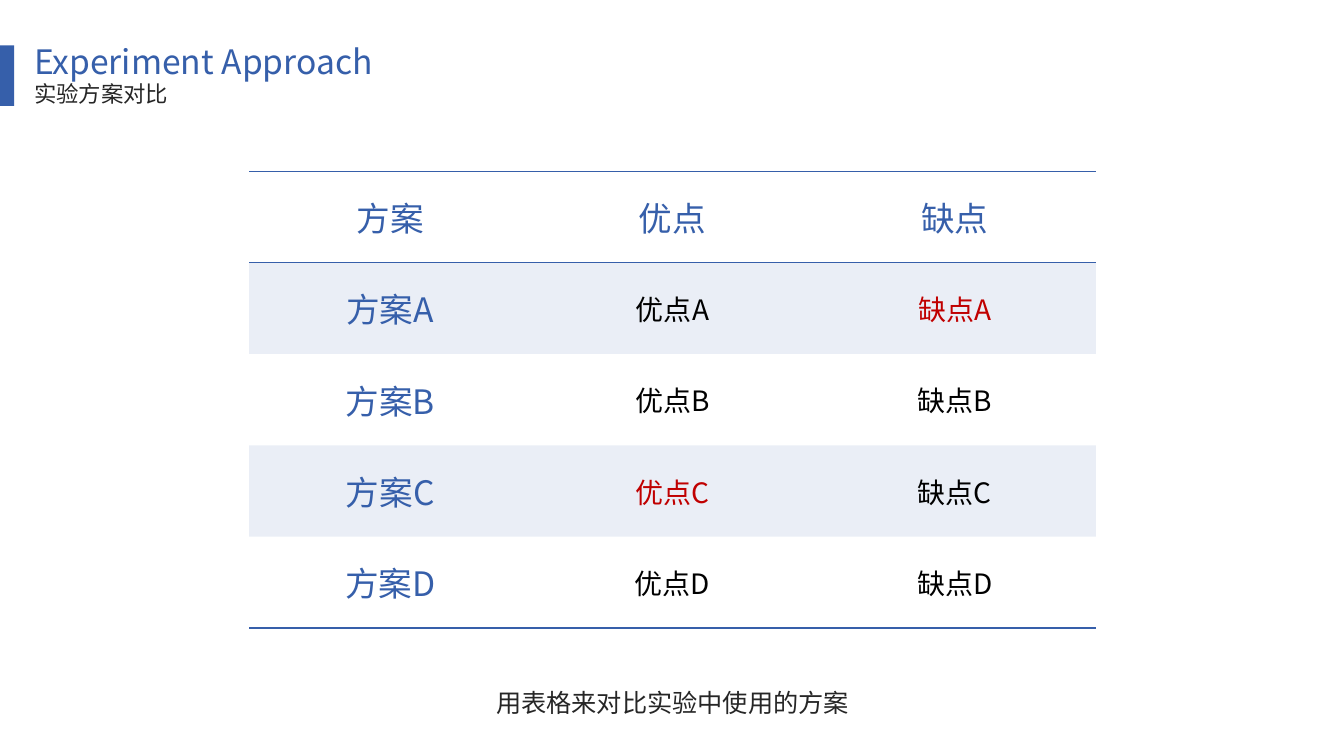
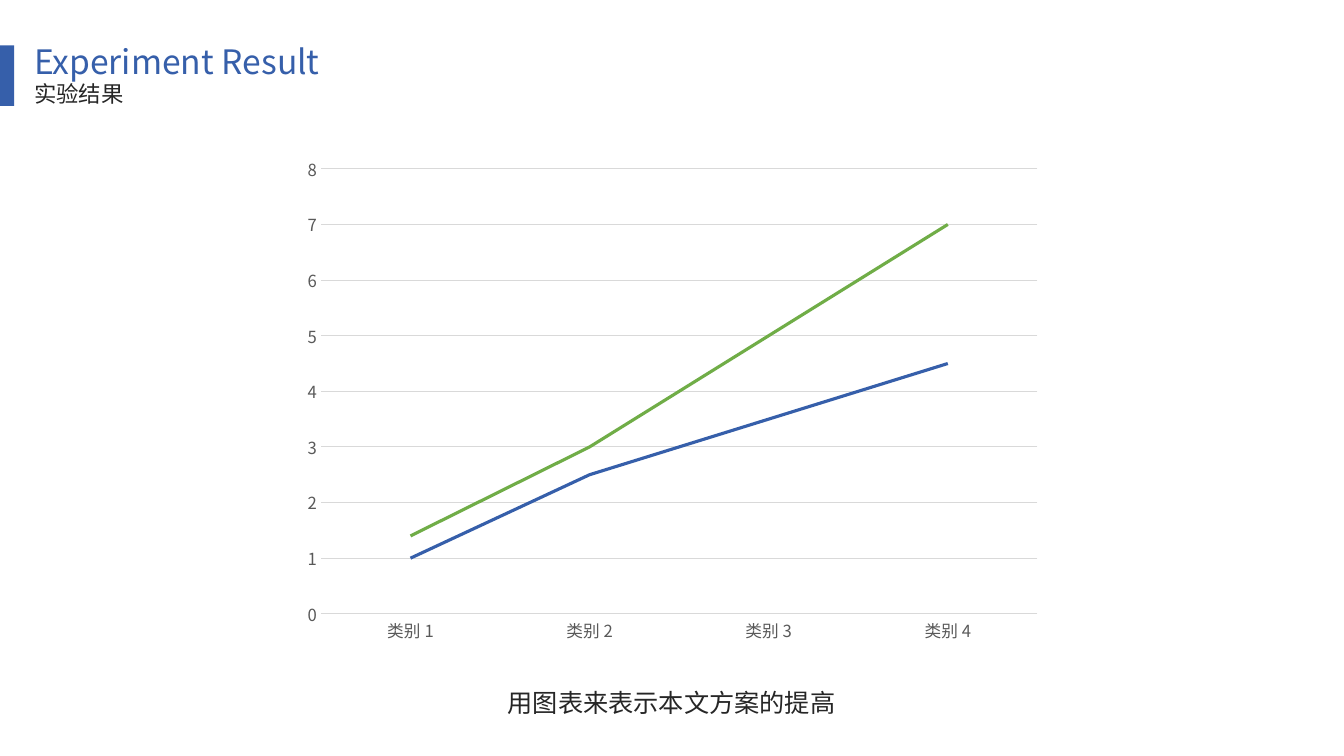
from lxml import etree
from pptx import Presentation
from pptx.chart import data as cd
from pptx.dml.color import RGBColor
from pptx.enum import chart as ch, shapes, text
from pptx.oxml import ns
from pptx.util import Inches, Pt

BLUE = RGBColor(0x36, 0x5F, 0xAA)
GREEN = RGBColor(0x70, 0xAD, 0x47)
RED = RGBColor(0xC0, 0x00, 0x00)
BLACK = RGBColor(0x00, 0x00, 0x00)
DARK = RGBColor(0x26, 0x26, 0x26)
GREY = RGBColor(0x59, 0x59, 0x59)
PALE = RGBColor(0xD9, 0xD9, 0xD9)
FONT = "Noto Sans CJK SC"
PLAIN = "{2D5ABB26-0587-4C30-8999-92F81FD0307C}"
HEADS = ["方案", "优点", "缺点"]
MARKED = {"缺点A", "优点C"}


def add_run(para, words, size, color):
    run = para.add_run()
    run.text = words
    run.font.size = Pt(size)
    run.font.color.rgb = color
    run.font.name = FONT
    east = etree.SubElement(run.font._element, ns.qn("a:ea"))
    east.set("typeface", FONT)


def add_text(slide, box, words, size, color, wrap=True):
    frame = slide.shapes.add_textbox(*map(Inches, box)).text_frame
    frame.word_wrap = wrap
    para = frame.paragraphs[0]
    add_run(para, words, size, color)
    return para


def add_head(slide, title, sub):
    bar = slide.shapes.add_shape(
        shapes.MSO_SHAPE.RECTANGLE, 0, Inches(0.45), Inches(0.14), Inches(0.6))
    bar.shadow.inherit = False
    bar.fill.solid()
    bar.fill.fore_color.rgb = BLUE
    bar.line.fill.background()
    lines = [(0.43, 0.46, title, 24, BLUE, 0.8),
             (0.78, 0.35, sub, 16, DARK, 0.9)]
    for top, high, words, size, color, space in lines:
        para = add_text(slide, (0.24, top, 7.17, high), words, size, color)
        para.line_spacing = space
        para.space_before = Pt(10)


def add_note(slide, words, left, wide):
    para = add_text(slide, (left, 6.77, wide, 0.4), words, 18, DARK, False)
    para.alignment = text.PP_ALIGN.CENTER


def add_edges(cell, sides):
    props = cell._tc.get_or_add_tcPr()
    for spot, side in enumerate(["lnL", "lnR", "lnT", "lnB"]):
        edge = etree.Element(ns.qn("a:" + side))
        if side in sides:
            edge.set("w", str(Pt(1)))
            fill = etree.SubElement(edge, ns.qn("a:solidFill"))
            etree.SubElement(fill, ns.qn("a:srgbClr")).set("val", str(BLUE))
        else:
            etree.SubElement(edge, ns.qn("a:noFill"))
        props.insert(spot, edge)


def tint(cell, shade):
    if not shade:
        cell.fill.background()
        return
    cell.fill.solid()
    cell.fill.fore_color.rgb = BLUE
    color = cell._tc.tcPr.find(".//" + ns.qn("a:srgbClr"))
    etree.SubElement(color, ns.qn("a:alpha")).set("val", "10000")


def add_grid(slide):
    rows = [HEADS] + [[head + key for head in HEADS] for key in "ABCD"]
    last = len(rows) - 1
    table = slide.shapes.add_table(
        len(rows), len(HEADS), Inches(2.47), Inches(1.7),
        Inches(8.4), Inches(4.53)).table
    table.first_row = table.horz_banding = False
    table._tbl.tblPr.find(ns.qn("a:tableStyleId")).text = PLAIN
    for r, row in enumerate(rows):
        sides = {0: ["lnT", "lnB"], 1: ["lnT"], last: ["lnB"]}.get(r, [])
        for c, words in enumerate(row):
            cell = table.cell(r, c)
            cell.vertical_anchor = text.MSO_ANCHOR.MIDDLE
            para = cell.text_frame.paragraphs[0]
            para.alignment = text.PP_ALIGN.CENTER
            if r == 0 or c == 0:
                add_run(para, words, 24, BLUE)
            else:
                add_run(para, words, 20, RED if words in MARKED else BLACK)
            tint(cell, r % 2)
            add_edges(cell, sides)


def set_font(font, size, color):
    font.name = FONT
    font.size = Pt(size)
    font.color.rgb = color


def set_line(line, color, width):
    line.color.rgb = color
    line.width = Pt(width)


def add_plot(slide):
    data = cd.CategoryChartData()
    data.categories = [f"类别 {n}" for n in range(1, 5)]
    data.add_series("Series 1", (1, 2.5, 3.5, 4.5))
    data.add_series("Series 2", (1.4, 3, 5, 7))
    chart = slide.shapes.add_chart(
        ch.XL_CHART_TYPE.LINE, Inches(2.9), Inches(1.45),
        Inches(7.54), Inches(5.03), data).chart
    chart.has_legend = chart.has_title = False
    set_font(chart.font, 10, BLACK)
    chart.plots[0].vary_by_categories = False
    for line, color in zip(chart.plots[0].series, (BLUE, GREEN)):
        line.smooth = False
        line.marker.style = ch.XL_MARKER_STYLE.NONE
        set_line(line.format.line, color, 2.25)
    cats, vals = chart.category_axis, chart.value_axis
    for axis in (cats, vals):
        axis.major_tick_mark = axis.minor_tick_mark = ch.XL_TICK_MARK.NONE
        set_font(axis.tick_labels.font, 11.9, GREY)
    set_line(cats.format.line, PALE, 0.75)
    vals.format.line.fill.background()
    vals.has_major_gridlines = True
    set_line(vals.major_gridlines.format.line, PALE, 0.75)
    vals.minimum_scale, vals.maximum_scale, vals.major_unit = 0, 8, 1


def main():
    deck = Presentation()
    deck.slide_width, deck.slide_height = Inches(13.33), Inches(7.5)
    blank = deck.slide_layouts[6]

    slide = deck.slides.add_slide(blank)
    add_head(slide, "Experiment Approach", "实验方案对比")
    add_grid(slide)
    add_note(slide, "用表格来对比实验中使用的方案", 4.8, 3.74)

    slide = deck.slides.add_slide(blank)
    add_head(slide, "Experiment Result", "实验结果")
    add_note(slide, "用图表来表示本文方案的提高", 4.92, 3.48)
    add_plot(slide)

    deck.save("out.pptx")


if __name__ == "__main__":
    main()
